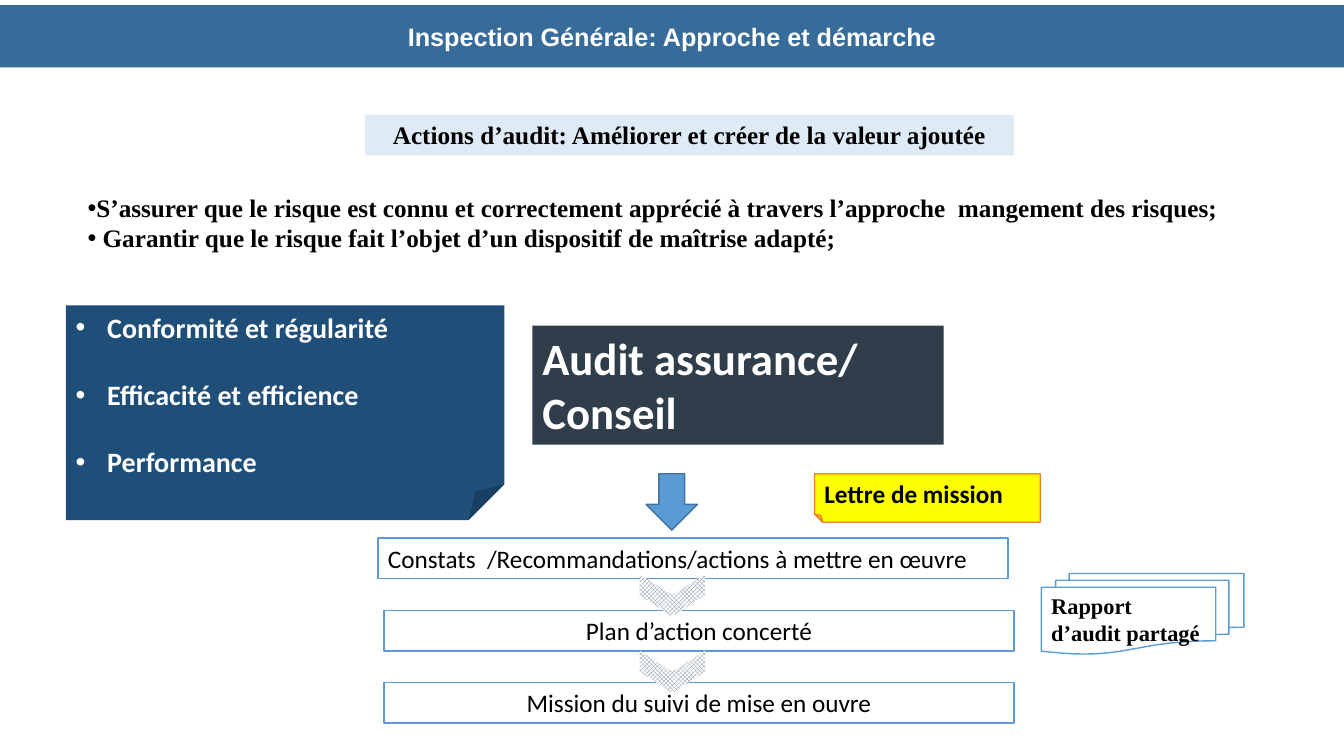
from lxml import etree
from pptx import Presentation
from pptx.dml.color import RGBColor
from pptx.enum.dml import MSO_PATTERN
from pptx.enum.shapes import MSO_SHAPE
from pptx.enum.text import MSO_ANCHOR, MSO_AUTO_SIZE, PP_ALIGN
from pptx.oxml.ns import qn
from pptx.util import Pt

LEFT, CENTER = PP_ALIGN.LEFT, PP_ALIGN.CENTER
TOP, MIDDLE = MSO_ANCHOR.TOP, MSO_ANCHOR.MIDDLE
NO_AUTOFIT = MSO_AUTO_SIZE.NONE
RECTANGLE, FOLDED = MSO_SHAPE.RECTANGLE, MSO_SHAPE.FOLDED_CORNER
DOWN_ARROW, CHEVRON = MSO_SHAPE.DOWN_ARROW, MSO_SHAPE.CHEVRON
MULTIDOCUMENT = MSO_SHAPE.FLOWCHART_MULTIDOCUMENT
TRELLIS = MSO_PATTERN.TRELLIS

COLORS = {
    "banner": "366B9A", "pale": "DEEBF7", "navy": "1F4E79", "slate": "303E4B",
    "blue": "5B9BD5", "arrow_edge": "43739E", "yellow": "FFFF00",
    "orange": "ED7D31", "gray": "6B7B8B", "white": "FFFFFF", "black": "000000",
}

# Content
TITLE = "Inspection Générale: Approche et démarche"
RISK_GOALS = [
    "S’assurer que le risque est connu et correctement apprécié à travers "
    "l’approche  mangement des risques;",
    " Garantir que le risque fait l’objet d’un dispositif de maîtrise adapté;",
]
AUDIT_AIMS = ["Conformité et régularité", "Efficacité et efficience", "Performance"]
STEPS = [  # text, left, alignment
    ("Constats  /Recommandations/actions à mettre en œuvre", 270, LEFT),
    ("Plan d’action concerté", 274.3, CENTER),
    ("Mission du suivi de mise en ouvre", 274.3, CENTER),
]

# Text formats
TIMES = {"name": "Times New Roman", "size": Pt(18), "bold": True, "color": "black"}
CALIBRI = {"name": "Calibri", "size": Pt(18), "bold": False, "color": "black"}
BANNER_TEXT = {"name": "Arial", "size": Pt(18), "bold": True, "color": "white"}
AIMS_TEXT = CALIBRI | {"size": Pt(20), "bold": True, "color": "white"}
AUDIT_TEXT = AIMS_TEXT | {"size": Pt(32)}

# Layout, in points
STEP_TOP, STEP_PITCH, STEP_SIZE = 384.4, 51.5, (450, 29)
CHEVRON_LEFT, CHEVRON_TOP, CHEVRON_PITCH, CHEVRON_SIZE = 465.1, 401.8, 54.7, (30.2, 46.8)


def color(name):
    return RGBColor.from_string(COLORS[name])


def place(shape, left, top, width, height):
    box = {"left": left, "top": top, "width": width, "height": height}
    for name, value in box.items():
        setattr(shape, name, Pt(value))


def paint(shape, fill, line=None):
    shape.fill.solid()
    shape.fill.fore_color.rgb = color(fill)
    if line:
        shape.line.color.rgb = color(line)
        shape.line.width = Pt(1)
    else:
        shape.line.fill.background()


def add_bullet(paragraph, indent):
    properties = paragraph._p.get_or_add_pPr()
    properties.set("marL", str(Pt(indent)))
    properties.set("indent", str(-Pt(indent)))
    font = etree.SubElement(properties, qn("a:buFont"))
    font.set("typeface", "Arial")
    etree.SubElement(properties, qn("a:buChar")).set("char", "•")


def write(shape, lines, text_format, align=LEFT, anchor=TOP, bullet=None, gap=0):
    frame = shape.text_frame
    frame_format = {"word_wrap": True, "auto_size": NO_AUTOFIT, "vertical_anchor": anchor,
                    "margin_left": Pt(7.2), "margin_right": Pt(7.2),
                    "margin_top": Pt(3.6), "margin_bottom": Pt(3.6)}
    for name, value in frame_format.items():
        setattr(frame, name, value)
    for index, line in enumerate(lines):
        paragraph = frame.add_paragraph() if index else frame.paragraphs[0]
        paragraph_format = {"alignment": align, "line_spacing": 1.0,
                            "space_before": Pt(gap if index else 0), "space_after": Pt(0)}
        for name, value in paragraph_format.items():
            setattr(paragraph, name, value)
        if bullet is not None:
            add_bullet(paragraph, bullet)
        run = paragraph.add_run()
        run.text = line
        for name, value in text_format.items():
            if name == "color":
                run.font.color.rgb = color(value)
            else:
                setattr(run.font, name, value)


def add_box(slide, kind, box, fill, line=None):
    shape = slide.shapes.add_shape(kind, *map(Pt, box))
    shape.shadow.inherit = False
    paint(shape, fill, line)
    return shape


presentation = Presentation()
presentation.slide_width, presentation.slide_height = Pt(960), Pt(540)
slide = presentation.slides.add_slide(presentation.slide_layouts[1])

# Title banner and risk goals
title, goals = slide.shapes.title, slide.placeholders[1]
place(title, 0, 3.6, 960, 44.6)
paint(title, "banner")
write(title, [TITLE], BANNER_TEXT, CENTER, MIDDLE)
place(goals, 55.4, 133.9, 846.7, 51.1)
write(goals, RISK_GOALS, TIMES, bullet=0)

# Subtitle band
subtitle = add_box(slide, RECTANGLE, (260.6, 82, 463.7, 29), "pale")
write(subtitle, ["Actions d’audit: Améliorer et créer de la valeur ajoutée"], TIMES, CENTER)

# Audit aims and audit type
aims = add_box(slide, FOLDED, (47, 218.2, 313.2, 153.4), "navy")
write(aims, AUDIT_AIMS, AIMS_TEXT, bullet=22.5, gap=24)
audit = add_box(slide, RECTANGLE, (380.3, 232.6, 293.8, 85), "slate")
write(audit, ["Audit assurance/", "Conseil"], AUDIT_TEXT)
add_box(slide, DOWN_ARROW, (461.5, 338.4, 36.7, 40.3), "blue", "arrow_edge")

# Steps
for index, (text, left, align) in enumerate(STEPS):
    box = (left, STEP_TOP + index * STEP_PITCH, *STEP_SIZE)
    write(add_box(slide, RECTANGLE, box, "white", "blue"), [text], CALIBRI, align)

# Chevrons between steps
for index in range(len(STEPS) - 1):
    box = (CHEVRON_LEFT, CHEVRON_TOP + index * CHEVRON_PITCH, *CHEVRON_SIZE)
    chevron = add_box(slide, CHEVRON, box, "white")
    chevron.rotation = 90
    chevron.fill.patterned()
    chevron.fill.pattern = TRELLIS
    chevron.fill.fore_color.rgb = color("gray")
    chevron.fill.back_color.rgb = color("white")

# Mission letter and shared report
letter = add_box(slide, FOLDED, (581.8, 338.4, 161.3, 34.6), "yellow", "orange")
letter._element.spPr.find(qn("a:xfrm")).set("flipH", "1")
write(letter, ["Lettre de mission"], CALIBRI | {"bold": True})
report = add_box(slide, MULTIDOCUMENT, (743.8, 409.7, 144.7, 57.6), "white", "blue")
write(report, ["Rapport d’audit partagé"], TIMES | {"size": Pt(16)})

presentation.save("out.pptx")
